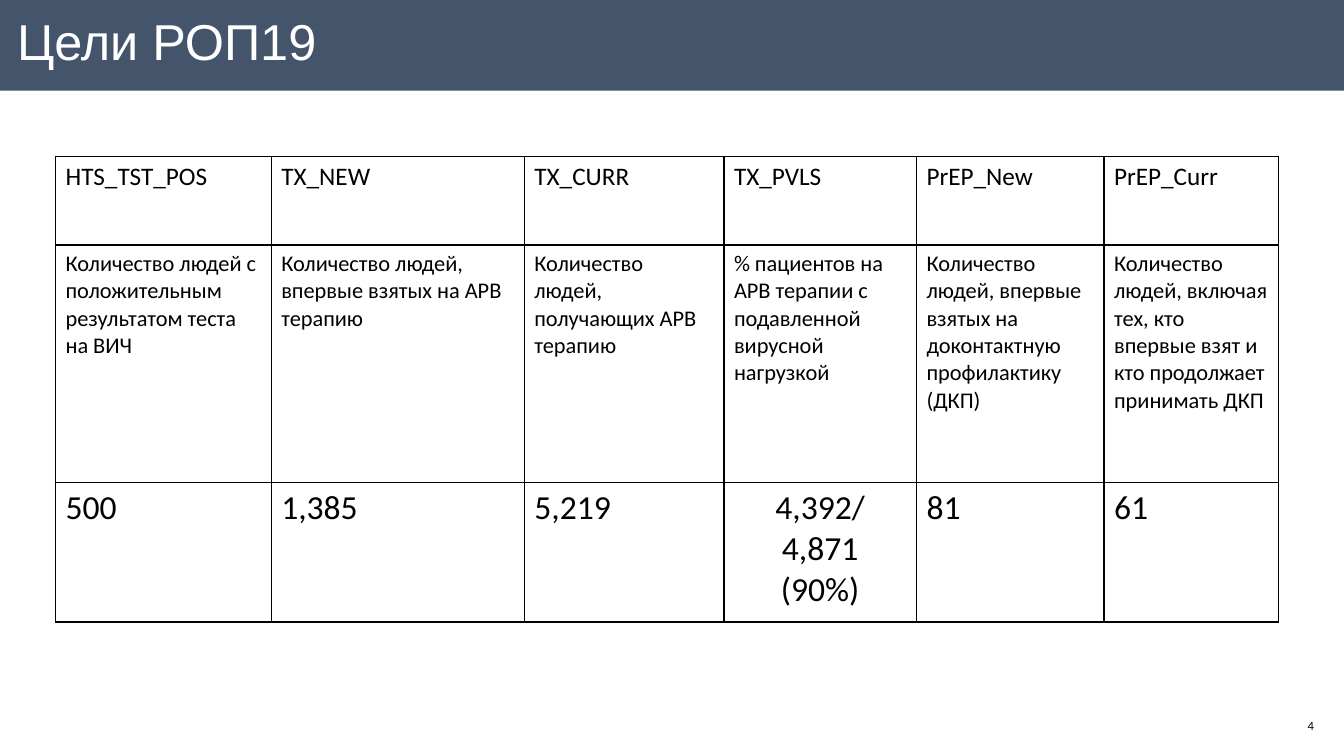
from dataclasses import dataclass

from lxml.etree import SubElement
from pptx import Presentation
from pptx.dml.color import RGBColor as RGB
from pptx.enum.shapes import MSO_SHAPE as SHAPE
from pptx.enum.text import MSO_ANCHOR as ANCHOR, PP_ALIGN as ALIGN
from pptx.oxml.ns import qn
from pptx.util import Inches, Pt

WIDTH, HEIGHT = Inches(13.33), Inches(7.5)


@dataclass(frozen=True)
class Theme:
    band: str = "44546A"
    title: str = "FFFFFF"
    text: str = "000000"
    number: str = "050606"
    heading_font: str = "Arial"
    body_font: str = "Calibri"
    title_size: int = 36
    number_size: int = 9
    row_sizes: tuple = (18, 16, 24)
    border_width: float = 1


THEME = Theme()

# Indicator code, what it counts, target (one entry per paragraph)
INDICATORS = [
    ("HTS_TST_POS", "Количество людей с положительным результатом теста на ВИЧ", ["500"]),
    ("TX_NEW", "Количество людей, впервые взятых на АРВ терапию", ["1,385"]),
    ("TX_CURR", "Количество людей, получающих АРВ терапию", ["5,219"]),
    ("TX_PVLS", "% пациентов на АРВ терапии с подавленной вирусной нагрузкой",
     ["4,392/", "4,871", "(90%)"]),
    ("PrEP_New", "Количество людей, впервые взятых на доконтактную профилактику (ДКП)", ["81"]),
    ("PrEP_Curr", "Количество людей, включая тех, кто впервые взят и кто продолжает "
     "принимать ДКП", ["61"]),
]
COLUMN_WEIGHTS = [2.14, 2.51, 1.98, 1.91, 1.86, 1.73]
ROW_WEIGHTS = [0.88, 2.36, 1.38]


def area(left, top, width, height):
    """Turn percentages of the slide's size into a position and size."""
    return (int(WIDTH * left / 100), int(HEIGHT * top / 100),
            int(WIDTH * width / 100), int(HEIGHT * height / 100))


def write(tf, lines, size, color, font=THEME.body_font, align=ALIGN.LEFT, spacing=None):
    for i, line in enumerate(lines):
        p = tf.paragraphs[0] if i == 0 else tf.add_paragraph()
        p.alignment = align
        if spacing:
            p.line_spacing = spacing
        r = p.add_run()
        r.text = line
        r.font.size = Pt(size)
        r.font.name = font
        r.font.color.rgb = RGB.from_string(color)


def add_band(s, box):
    sp = s.shapes.add_shape(SHAPE.RECTANGLE, *box)
    sp.shadow.inherit = False
    sp.fill.solid()
    sp.fill.fore_color.rgb = RGB.from_string(THEME.band)
    sp.line.fill.background()


def add_text(s, box, text, size, color, inset=(0, 0), anchor=ANCHOR.TOP, **style):
    tf = s.shapes.add_textbox(*box).text_frame
    tf.word_wrap = True
    tf.vertical_anchor = anchor
    tf.margin_left = tf.margin_right = Inches(inset[0])
    tf.margin_top = tf.margin_bottom = Inches(inset[1])
    write(tf, [text], size, color, **style)


def outline_cell(cell):
    """Draw all four borders; they must precede the fill in the cell's XML."""
    tc_pr = cell._tc.get_or_add_tcPr()
    for side in ("a:lnL", "a:lnR", "a:lnT", "a:lnB"):
        ln = SubElement(tc_pr, qn(side), w=str(Pt(THEME.border_width)))
        fill = SubElement(ln, qn("a:solidFill"))
        SubElement(fill, qn("a:srgbClr"), val=THEME.text)


def add_indicator_table(s, box):
    rows = list(zip(*INDICATORS))
    table = s.shapes.add_table(len(rows), len(INDICATORS), *box).table
    table.first_row = table.horz_banding = False
    for column, weight in zip(table.columns, COLUMN_WEIGHTS):
        column.width = int(box[2] * weight / sum(COLUMN_WEIGHTS))
    for row, weight in zip(table.rows, ROW_WEIGHTS):
        row.height = int(box[3] * weight / sum(ROW_WEIGHTS))
    for i, (contents, size) in enumerate(zip(rows, THEME.row_sizes)):
        for j, content in enumerate(contents):
            cell = table.cell(i, j)
            outline_cell(cell)
            cell.fill.background()
            lines = [content] if isinstance(content, str) else content
            align = ALIGN.CENTER if len(lines) > 1 else ALIGN.LEFT
            write(cell.text_frame, lines, size, THEME.text, align=align)


def main():
    prs = Presentation()
    prs.slide_width, prs.slide_height = WIDTH, HEIGHT
    s = prs.slides.add_slide(prs.slide_layouts[6])
    add_band(s, area(0, 0, 100, 12))
    add_text(s, area(93.7, 93.33, 4.8, 5.33), "4", THEME.number_size, THEME.number,
             inset=(0.1, 0.05), anchor=ANCHOR.MIDDLE, align=ALIGN.RIGHT)
    add_text(s, area(1.28, 2.93, 95.95, 6.67), "Цели РОП19", THEME.title_size,
             THEME.title, font=THEME.heading_font, spacing=0.8)
    add_indicator_table(s, area(4.13, 20.67, 91, 61.6))
    prs.save("out.pptx")


if __name__ == "__main__":
    main()
